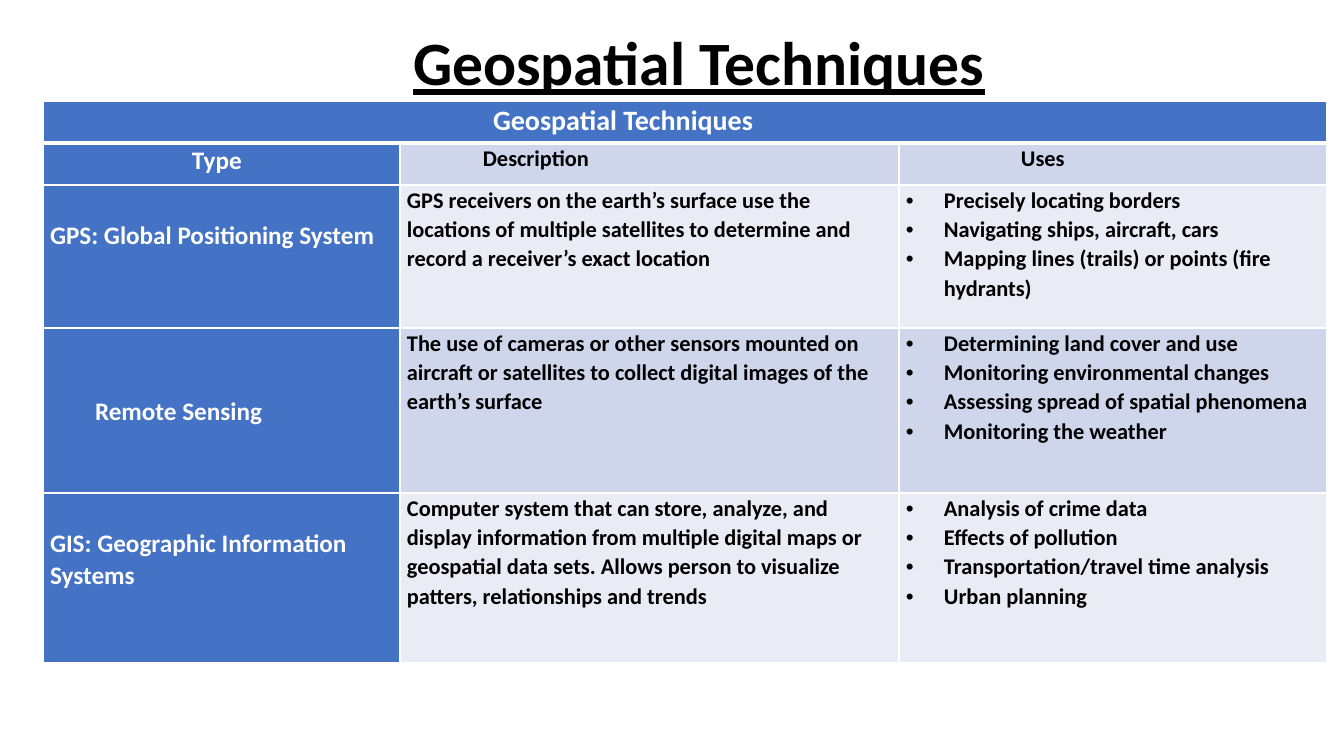
from pptx import Presentation
from pptx.dml.color import RGBColor
from pptx.enum.text import MSO_ANCHOR, MSO_AUTO_SIZE, PP_ALIGN
from pptx.oxml import parse_xml
from pptx.oxml.ns import nsdecls
from pptx.util import Emu, Pt

SCALE = 914400 / 100.8  # EMU in one px
FONT = "Calibri"
BLUE, BAND, LIGHT, WHITE, BLACK = "4472C4", "CFD5EA", "E9EBF5", "FFFFFF", "000000"

COLUMN_WIDTHS = [357, 499, 428]
ROW_HEIGHTS = [42, 42, 143, 165, 170]
BULLET_INDENT = 38

# Name, indent, space above the name, description, uses
TECHNIQUES = [
    ("GPS: Global Positioning System", 0, 33,
     "GPS receivers on the earth’s surface use the locations of multiple satellites "
     "to determine and record a receiver’s exact location",
     ["Precisely locating borders", "Navigating ships, aircraft, cars",
      "Mapping lines (trails) or points (fire hydrants)"]),
    ("Remote Sensing", 45, 66,
     "The use of cameras or other sensors mounted on aircraft or satellites "
     "to collect digital images of the earth’s surface",
     ["Determining land cover and use", "Monitoring environmental changes",
      "Assessing spread of spatial phenomena", "Monitoring the weather"]),
    ("GIS: Geographic Information Systems", 0, 33,
     "Computer system that can store, analyze, and display information from multiple "
     "digital maps or geospatial data sets. Allows person to visualize patters, "
     "relationships and trends",
     ["Analysis of crime data", "Effects of pollution",
      "Transportation/travel time analysis", "Urban planning"]),
]


def px(length):
    return Emu(round(length * SCALE))


def color(value):
    return RGBColor.from_string(value)


def write(para, text, size=16, fill=BLACK, underline=None, spacing=1.07,
          indent=0, bullet=False):
    para.alignment = PP_ALIGN.LEFT
    para.line_spacing = spacing
    span = para.add_run()
    span.text = text
    font = span.font
    font.name, font.size, font.bold, font.underline = FONT, Pt(size), True, underline
    font.color.rgb = color(fill)
    properties = para._p.get_or_add_pPr()
    properties.set("marL", str(px(indent)))
    properties.set("indent", str(px(-indent if bullet else 0)))
    if bullet:
        properties.append(parse_xml(f'<a:buFont {nsdecls("a")} typeface="Arial"/>'))
        properties.append(parse_xml(f'<a:buChar {nsdecls("a")} char="•"/>'))


def add_borders(cell, bottom=1):
    widths = {"lnL": 1, "lnR": 1, "lnT": 1, "lnB": bottom}
    for position, (side, width) in enumerate(widths.items()):
        cell._tc.get_or_add_tcPr().insert(position, parse_xml(
            f'<a:{side} {nsdecls("a")} w="{Pt(width)}"><a:solidFill>'
            f'<a:srgbClr val="{WHITE}"/></a:solidFill></a:{side}>'))


def fill_cell(cell, lines, background, top=0, bottom_border=1, **text_format):
    cell.fill.solid()
    cell.fill.fore_color.rgb = color(background)
    cell.margin_left = cell.margin_right = px(7)
    cell.margin_top, cell.margin_bottom = px(top), 0
    cell.vertical_anchor = MSO_ANCHOR.TOP
    add_borders(cell, bottom_border)
    frame = cell.text_frame
    for number, line in enumerate(lines):
        para = frame.add_paragraph() if number else frame.paragraphs[0]
        write(para, line, **text_format)


def add_title(page, text):
    box = page.shapes.title
    box.left, box.top, box.width, box.height = px(151), px(14), px(1058), px(103)
    frame = box.text_frame
    frame.word_wrap = True
    frame.auto_size = MSO_AUTO_SIZE.NONE
    frame.vertical_anchor = MSO_ANCHOR.MIDDLE
    write(frame.paragraphs[0], text, size=44, underline=True, spacing=0.9, indent=252)


def add_techniques_table(page):
    table = page.shapes.add_table(
        len(ROW_HEIGHTS), len(COLUMN_WIDTHS), px(43), px(101),
        px(sum(COLUMN_WIDTHS)), px(sum(ROW_HEIGHTS))).table
    table.first_row = table.horz_banding = False
    for column, width in zip(table.columns, COLUMN_WIDTHS):
        column.width = px(width)
    for row, height in zip(table.rows, ROW_HEIGHTS):
        row.height = px(height)

    # Headings
    table.cell(0, 0).merge(table.cell(0, 2))
    fill_cell(table.cell(0, 0), ["Geospatial Techniques"], BLUE, bottom_border=3,
              size=20, fill=WHITE, indent=443)
    fill_cell(table.cell(1, 0), ["Type"], BLUE, size=18, fill=WHITE, indent=142)
    fill_cell(table.cell(1, 1), ["Description"], BAND, indent=76)
    fill_cell(table.cell(1, 2), ["Uses"], BAND, indent=115)

    # One row for each technique
    for row, (name, indent, top, description, uses) in enumerate(TECHNIQUES, 2):
        background = BAND if row % 2 else LIGHT
        fill_cell(table.cell(row, 0), [name], BLUE, top=top,
                  size=18, fill=WHITE, indent=indent)
        fill_cell(table.cell(row, 1), [description], background)
        fill_cell(table.cell(row, 2), uses, background,
                  indent=BULLET_INDENT, bullet=True)


def main():
    deck = Presentation()
    deck.slide_width, deck.slide_height = px(1344), px(756)
    page = deck.slides.add_slide(deck.slide_layouts[5])
    add_title(page, "Geospatial Techniques")
    add_techniques_table(page)
    deck.save("out.pptx")


if __name__ == "__main__":
    main()
